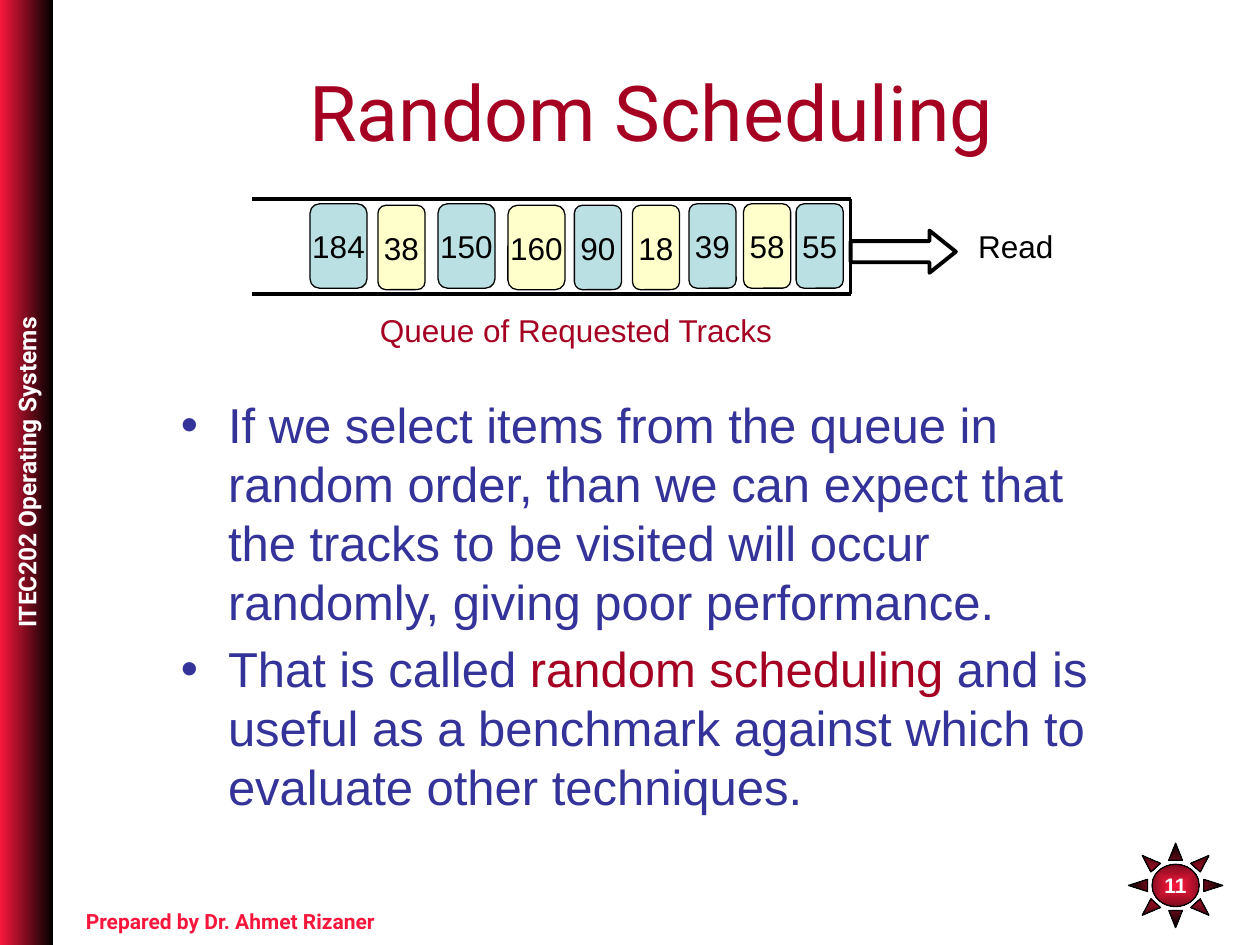
from dataclasses import dataclass

import pptx
import pptx.dml.color
import pptx.enum.shapes
import pptx.enum.text
import pptx.oxml
import pptx.oxml.ns
import pptx.util
from lxml import etree

Cm = pptx.util.Cm
Pt = pptx.util.Pt
RGBColor = pptx.dml.color.RGBColor
Shape = pptx.enum.shapes.MSO_SHAPE
Align = pptx.enum.text.PP_ALIGN
Anchor = pptx.enum.text.MSO_ANCHOR

RED = RGBColor(0xF7, 0x17, 0x3C)
CRIMSON = RGBColor(0xA5, 0x00, 0x21)
INDIGO = RGBColor(0x33, 0x33, 0x99)
PALE_BLUE = RGBColor(0xBB, 0xE0, 0xE3)
PALE_YELLOW = RGBColor(0xFF, 0xFF, 0xCC)
BLACK = RGBColor(0, 0, 0)
WHITE = RGBColor(0xFF, 0xFF, 0xFF)

QUEUE_LEFT, QUEUE_RIGHT = 5.08, 17.15
QUEUE_TOP, QUEUE_BOTTOM = 4.02, 5.93


@dataclass(frozen=True)
class Box:
    left: float
    top: float
    width: float
    height: float

    def lengths(self) -> tuple:
        return Cm(self.left), Cm(self.top), Cm(self.width), Cm(self.height)


@dataclass(frozen=True)
class Track:
    number: str
    left: float
    top: float = 4.11

    @property
    def box(self) -> Box:
        return Box(self.left, self.top, 1.15 if len(self.number) > 2 else 0.95, 1.7)


@dataclass(frozen=True)
class Edge:
    start: tuple[float, float]
    end: tuple[float, float]
    weight: float


LOW = 4.14
TRACKS = [
    Track("184", 6.25), Track("38", 7.62, LOW), Track("150", 8.83),
    Track("160", 10.24, LOW), Track("90", 11.58, LOW), Track("18", 12.75, LOW),
    Track("39", 13.89), Track("58", 14.99), Track("55", 16.05),
]

QUEUE_EDGES = [
    Edge((QUEUE_LEFT, QUEUE_TOP), (QUEUE_RIGHT, QUEUE_TOP), 2.25),
    Edge((QUEUE_RIGHT, QUEUE_TOP), (QUEUE_RIGHT, QUEUE_BOTTOM), 1.5),
    Edge((QUEUE_RIGHT, QUEUE_BOTTOM), (QUEUE_LEFT, QUEUE_BOTTOM), 2.25),
]

BULLETS = [
    [("If we select items from the queue in random order, than we can expect that "
      "the tracks to be visited will occur randomly, giving poor performance.", INDIGO)],
    [("That is called ", INDIGO), ("random scheduling", CRIMSON),
     (" and is useful as a benchmark against which to evaluate other techniques.", INDIGO)],
]


def write(paragraph, text: str, *, size: float = 18, color: RGBColor = BLACK,
          font: str = "Arial", bold: bool = False, align=None) -> None:
    """Append a formatted run to the paragraph."""
    if align is not None:
        paragraph.alignment = align
    run = paragraph.add_run()
    run.text = text
    run.font.size = Pt(size)
    run.font.name = font
    run.font.bold = bold
    run.font.color.rgb = color


def add_label(slide, box: Box, text: str, **text_format) -> None:
    frame = slide.shapes.add_textbox(*box.lengths()).text_frame
    frame.word_wrap = False
    write(frame.paragraphs[0], text, **text_format)


def add_shape(slide, kind, box: Box, *, fill: RGBColor | None = None,
              line_weight: float = 0, text: str = "", **text_format):
    shape = slide.shapes.add_shape(kind, *box.lengths())
    shape.shadow.inherit = False
    if fill is None:
        shape.fill.background()
    else:
        shape.fill.solid()
        shape.fill.fore_color.rgb = fill
    if line_weight:
        shape.line.color.rgb = BLACK
        shape.line.width = Pt(line_weight)
    else:
        shape.line.fill.background()
    if text:
        frame = shape.text_frame
        frame.word_wrap = False
        frame.vertical_anchor = Anchor.MIDDLE
        write(frame.paragraphs[0], text, align=Align.CENTER, **text_format)
    return shape


def fade_red_to_black(shape) -> None:
    """Fill from red at the top to black at the bottom."""
    shape.fill.gradient()
    shape.fill.gradient_angle = 270
    for stop, color, position in zip(shape.fill.gradient_stops, (RED, BLACK), (0, 1)):
        stop.color.rgb = color
        stop.position = position


def fade_from_centre(shape) -> None:
    fade_red_to_black(shape)
    linear = next(shape.element.spPr.iter(pptx.oxml.ns.qn("a:lin")))
    linear.getparent().replace(linear, pptx.oxml.parse_xml(
        f'<a:path {pptx.oxml.ns.nsdecls("a")} path="rect">'
        '<a:fillToRect l="50000" t="50000" r="50000" b="50000"/></a:path>'))


def add_edge(slide, edge: Edge) -> None:
    line = slide.shapes.add_connector(
        pptx.enum.shapes.MSO_CONNECTOR.STRAIGHT,
        *(Cm(value) for value in edge.start + edge.end))
    line.line.color.rgb = BLACK
    line.line.width = Pt(edge.weight)
    etree.SubElement(line.element.spPr, pptx.oxml.ns.qn("a:effectLst"))


def place(placeholder, box: Box) -> None:
    (placeholder.left, placeholder.top,
     placeholder.width, placeholder.height) = box.lengths()


def add_frame(slide) -> None:
    """Draw the side band, the author line and the page number."""
    band = add_shape(slide, Shape.RECTANGLE, Box(-8.99, 8.99, 19.05, 1.07),
                     text="ITEC202 Operating Systems", size=14, color=WHITE,
                     font="Roboto", bold=True)
    band.rotation = 270
    fade_red_to_black(band)
    add_label(slide, Box(1.48, 18.19, 7.09, 0.76), "Prepared by Dr. Ahmet Rizaner",
              size=12, color=RED, font="Roboto", bold=True)
    sun = add_shape(slide, Shape.SUN, Box(22.75, 17, 1.9, 1.7), line_weight=0.75,
                    text="11", size=12, color=WHITE, bold=True)
    fade_from_centre(sun)


def add_title_and_body(slide) -> None:
    title = slide.shapes.title
    place(title, Box(1.69, 0.64, 23.28, 3.18))
    title.text_frame.vertical_anchor = Anchor.MIDDLE
    write(title.text_frame.paragraphs[0], "Random Scheduling ", size=44,
          color=CRIMSON, font="Roboto", align=Align.CENTER)

    body = slide.placeholders[1]
    place(body, Box(3.39, 7.83, 19.47, 9.53))
    frame = body.text_frame
    frame.auto_size = pptx.enum.text.MSO_AUTO_SIZE.NONE
    for index, runs in enumerate(BULLETS):
        paragraph = frame.add_paragraph() if index else frame.paragraphs[0]
        paragraph.space_before = Pt(5 if index else 0)
        for text, color in runs:
            write(paragraph, text, size=28, color=color)


def add_queue(slide) -> None:
    for edge in QUEUE_EDGES:
        add_edge(slide, edge)
    arrow = add_shape(slide, Shape.RIGHT_ARROW, Box(QUEUE_RIGHT, 4.65, 2.12, 0.85),
                      line_weight=2.25)
    arrow.adjustments[1] = 0.625
    add_label(slide, Box(19.47, 4.45, 2.03, 1.02), "Read")
    for index, track in enumerate(TRACKS):
        add_shape(slide, Shape.ROUNDED_RECTANGLE, track.box,
                  fill=PALE_YELLOW if index % 2 else PALE_BLUE,
                  line_weight=0.75, text=track.number)
    add_label(slide, Box(7.41, 6.14, 8.46, 1.02), "Queue of Requested Tracks",
              color=CRIMSON)


def main() -> None:
    deck = pptx.Presentation()
    deck.slide_width, deck.slide_height = Cm(25.4), Cm(19.05)
    slide = deck.slides.add_slide(deck.slide_layouts[1])
    add_frame(slide)
    add_title_and_body(slide)
    add_queue(slide)
    deck.save("out.pptx")


if __name__ == "__main__":
    main()
